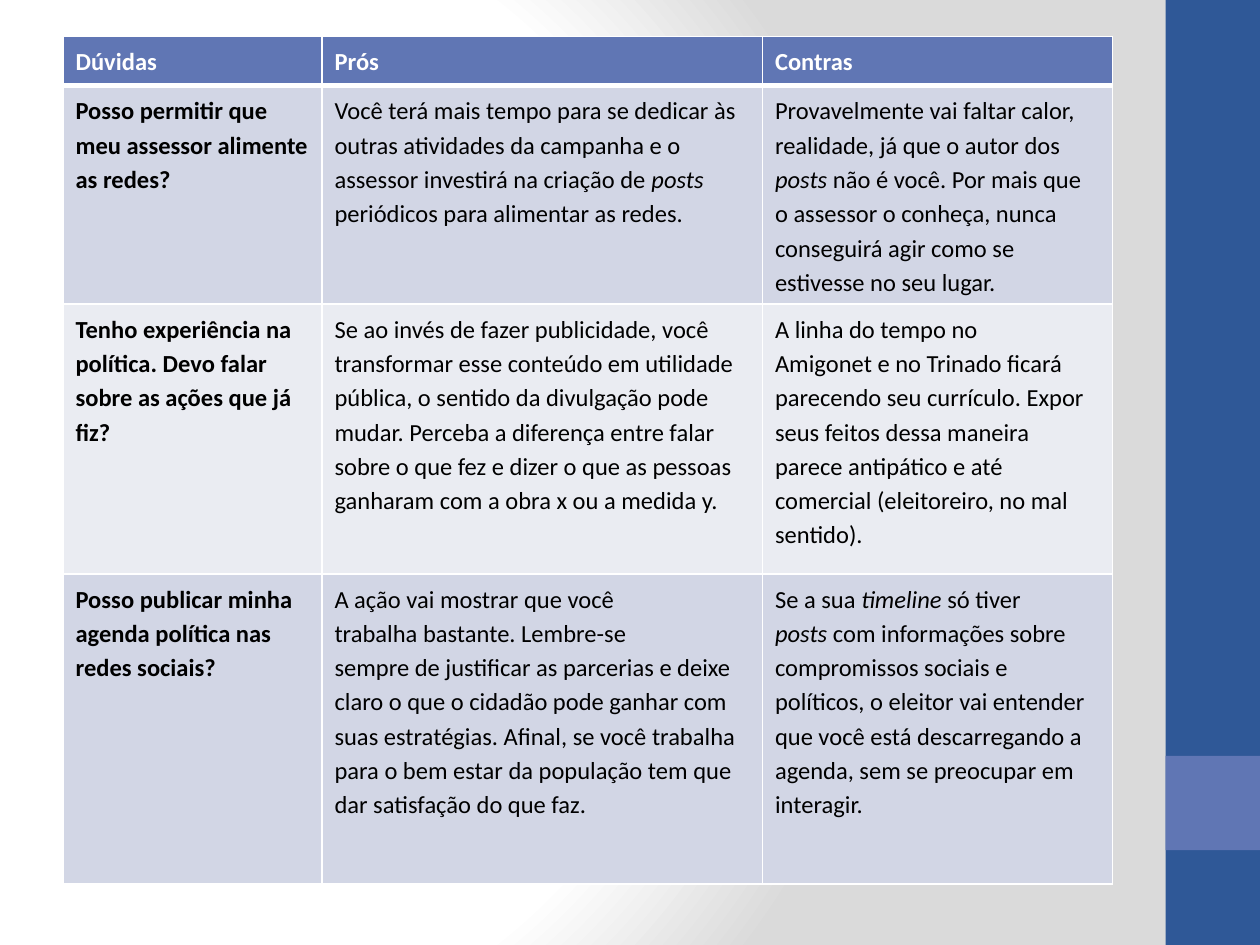
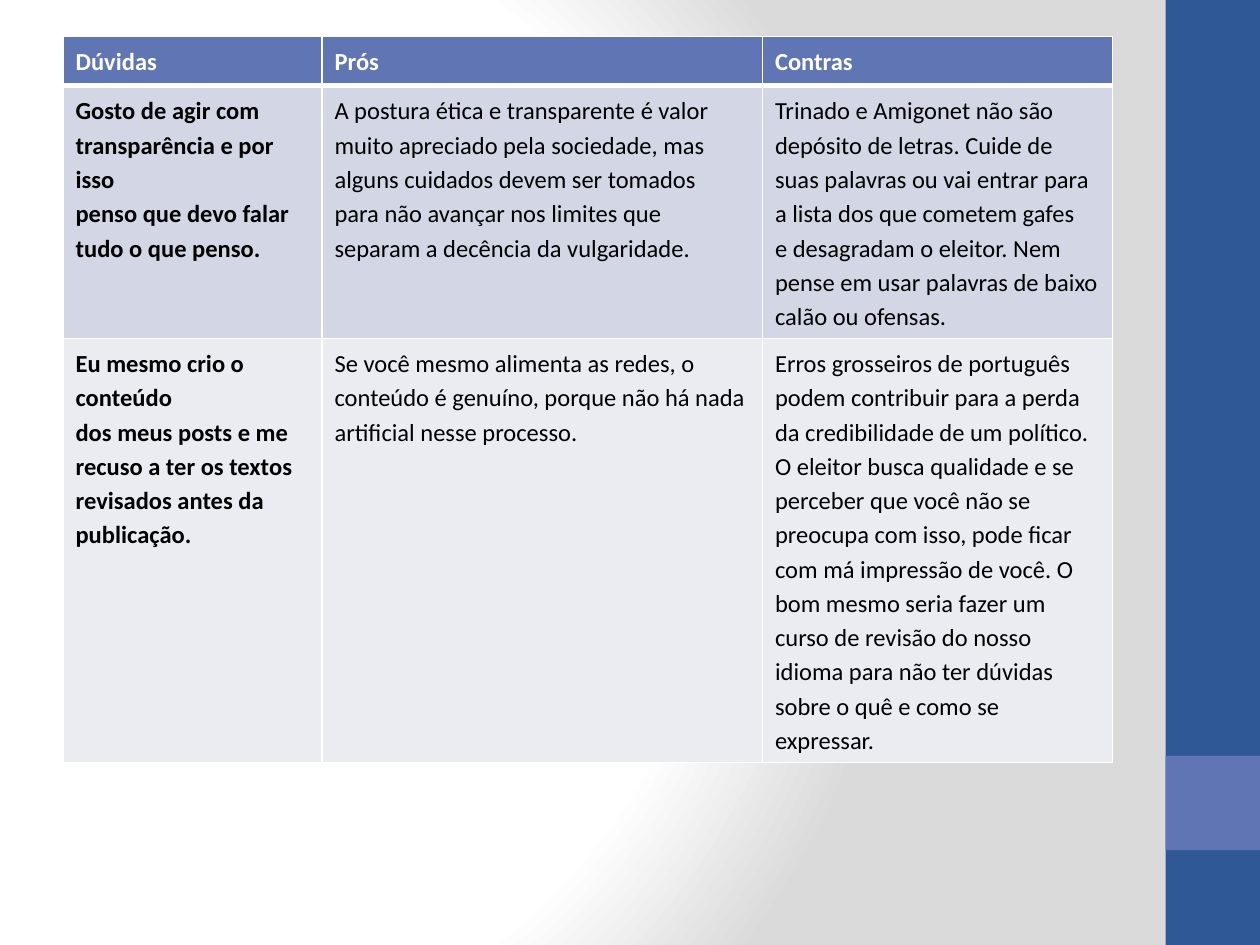
from pptx import Presentation
from pptx.dml.color import RGBColor
from pptx.enum.shapes import MSO_SHAPE
from pptx.oxml import parse_xml
from pptx.oxml.ns import nsdecls, qn
from pptx.util import Cm, Pt

RECTANGLE = MSO_SHAPE.RECTANGLE

# Content: a line break starts a paragraph, asterisks enclose italics
HEADINGS = ("Dúvidas", "Prós", "Contras")
SLIDES = [
    {
        "heights": (0.99, 4.17, 5.44, 6.25),
        "questions": [
            (
                "Posso permitir que meu assessor alimente as redes?",
                "Você terá mais tempo para se dedicar às outras atividades da campanha e o "
                "assessor investirá na criação de *posts* periódicos para alimentar as redes.",
                "Provavelmente vai faltar calor, realidade, já que o autor dos *posts* não é "
                "você. Por mais que o assessor o conheça, nunca conseguirá agir como se "
                "estivesse no seu lugar.",
            ),
            (
                "Tenho experiência na política. Devo falar sobre as ações que já fiz?",
                "Se ao invés de fazer publicidade, você transformar esse conteúdo em utilidade "
                "pública, o sentido da divulgação pode mudar. Perceba a diferença entre falar "
                "sobre o que fez e dizer o que as pessoas ganharam com a obra x ou a medida y.",
                "A linha do tempo no\n"
                "Amigonet e no Trinado ficará parecendo seu currículo. Expor seus feitos dessa "
                "maneira parece antipático e até comercial (eleitoreiro, no mal sentido).",
            ),
            (
                "Posso publicar minha agenda política nas redes sociais?",
                "A ação vai mostrar que você\n"
                "trabalha bastante. Lembre-se\n"
                "sempre de justificar as parcerias e deixe claro o que o cidadão pode ganhar "
                "com suas estratégias. Afinal, se você trabalha para o bem estar da população "
                "tem que dar satisfação do que faz.",
                "Se a sua *timeline* só tiver\n"
                "*posts* com informações sobre compromissos sociais e políticos, o eleitor vai "
                "entender que você está descarregando a agenda, sem se preocupar em interagir.",
            ),
        ],
    },
    {
        "heights": (0.99, 5.0, 8.5),
        "questions": [
            (
                "Gosto de agir com\n"
                "transparência e por isso\n"
                "penso que devo falar tudo o que penso.",
                "A postura ética e transparente é valor muito apreciado pela sociedade, mas "
                "alguns cuidados devem ser tomados\n"
                "para não avançar nos limites que separam a decência da vulgaridade.",
                "Trinado e Amigonet não são depósito de letras. Cuide de suas palavras ou vai "
                "entrar para a lista dos que cometem gafes\n"
                "e desagradam o eleitor. Nem\n"
                "pense em usar palavras de baixo calão ou ofensas.",
            ),
            (
                "Eu mesmo crio o conteúdo\n"
                "dos meus posts e me recuso a ter os textos revisados antes da publicação.",
                "Se você mesmo alimenta as redes, o conteúdo é genuíno, porque não há nada "
                "artificial nesse processo.",
                "Erros grosseiros de português podem contribuir para a perda\n"
                "da credibilidade de um político. O eleitor busca qualidade e se perceber que "
                "você não se preocupa com isso, pode ficar com má impressão de você. O bom "
                "mesmo seria fazer um curso de revisão do nosso idioma para não ter dúvidas "
                "sobre o quê e como se expressar.",
            ),
        ],
    },
]

# Shared look
WHITE = RGBColor(0xFF, 0xFF, 0xFF)
BLACK = RGBColor(0x00, 0x00, 0x00)
GREY = RGBColor(0xDA, 0xDA, 0xDA)
NAVY = RGBColor(0x2F, 0x58, 0x97)
PERIWINKLE = RGBColor(0x60, 0x76, 0xB4)
ROW_TINTS = (RGBColor(0xD2, 0xD6, 0xE5), RGBColor(0xEA, 0xEC, 0xF2))
TEXT_FORMAT = {"name": "Calibri", "size": Pt(14)}
LINE_SPACING = 1.15
THIN, THICK = Pt(1), Pt(3)

PAGE_WIDTH, PAGE_HEIGHT = Cm(25.4), Cm(19.05)
BAND_WIDTH = Cm(1.9)
BANDS = [(0, PAGE_HEIGHT, NAVY), (Cm(15.24), BAND_WIDTH, PERIWINKLE)]
TABLE_LEFT, TABLE_TOP = Cm(1.27), Cm(0.74)
COLUMN_WIDTHS = (Cm(5.22), Cm(8.88), Cm(7.06))


def paint_background(slide):
    slide.background.fill.gradient()
    gradient = slide.element.find(".//" + qn("a:gradFill"))
    stops = "".join(
        f'<a:gs pos="{place}"><a:srgbClr val="{color}"/></a:gs>'
        for place, color in ((0, WHITE), (75000, WHITE), (100000, GREY)))
    gradient.getparent().replace(gradient, parse_xml(
        f'<a:gradFill {nsdecls("a")} rotWithShape="1"><a:gsLst>{stops}</a:gsLst>'
        '<a:path path="circle"><a:fillToRect l="20000" t="50000" r="100000" b="50000"/>'
        '</a:path></a:gradFill>'))


def add_bands(slide):
    for top, height, color in BANDS:
        band = slide.shapes.add_shape(
            RECTANGLE, PAGE_WIDTH - BAND_WIDTH, top, BAND_WIDTH, height)
        band.shadow.inherit = False
        band.fill.solid()
        band.fill.fore_color.rgb = color
        band.line.fill.background()


def write_text(cell, text, color, bold):
    for number, line in enumerate(text.split("\n")):
        frame = cell.text_frame
        paragraph = frame.add_paragraph() if number else frame.paragraphs[0]
        paragraph.line_spacing = LINE_SPACING
        for part, words in enumerate(line.split("*")):
            if not words:
                continue
            run = paragraph.add_run()
            run.text = words
            look = TEXT_FORMAT | {"bold": bold, "italic": part % 2 == 1}
            for name, value in look.items():
                setattr(run.font, name, value)
            run.font.color.rgb = color


def draw_borders(cell, top, bottom):
    properties = cell._tc.get_or_add_tcPr()
    for side, width in {"L": THIN, "R": THIN, "T": top, "B": bottom}.items():
        properties.append(parse_xml(
            f'<a:ln{side} {nsdecls("a")} w="{width}"><a:solidFill>'
            f'<a:srgbClr val="{WHITE}"/></a:solidFill></a:ln{side}>'))


def add_questions(slide, questions, heights):
    rows = [HEADINGS, *questions]
    table = slide.shapes.add_table(
        len(rows), len(HEADINGS), TABLE_LEFT, TABLE_TOP,
        sum(COLUMN_WIDTHS), Cm(sum(heights))).table
    table.horz_banding = False
    for column, width in zip(table.columns, COLUMN_WIDTHS):
        column.width = width
    for r, (texts, height) in enumerate(zip(rows, heights)):
        table.rows[r].height = Cm(height)
        heading = r == 0
        for c, text in enumerate(texts):
            cell = table.cell(r, c)
            write_text(cell, text, WHITE if heading else BLACK, heading or c == 0)
            # The thick rule separates the headings from the first question
            draw_borders(cell, THICK if r == 1 else THIN, THICK if heading else THIN)
            cell.fill.solid()
            cell.fill.fore_color.rgb = PERIWINKLE if heading else ROW_TINTS[(r - 1) % 2]


def main():
    deck = Presentation()
    deck.slide_width, deck.slide_height = PAGE_WIDTH, PAGE_HEIGHT
    for content in SLIDES:
        slide = deck.slides.add_slide(deck.slide_layouts[6])
        paint_background(slide)
        add_bands(slide)
        add_questions(slide, content["questions"], content["heights"])
    deck.save("out.pptx")


if __name__ == "__main__":
    main()
